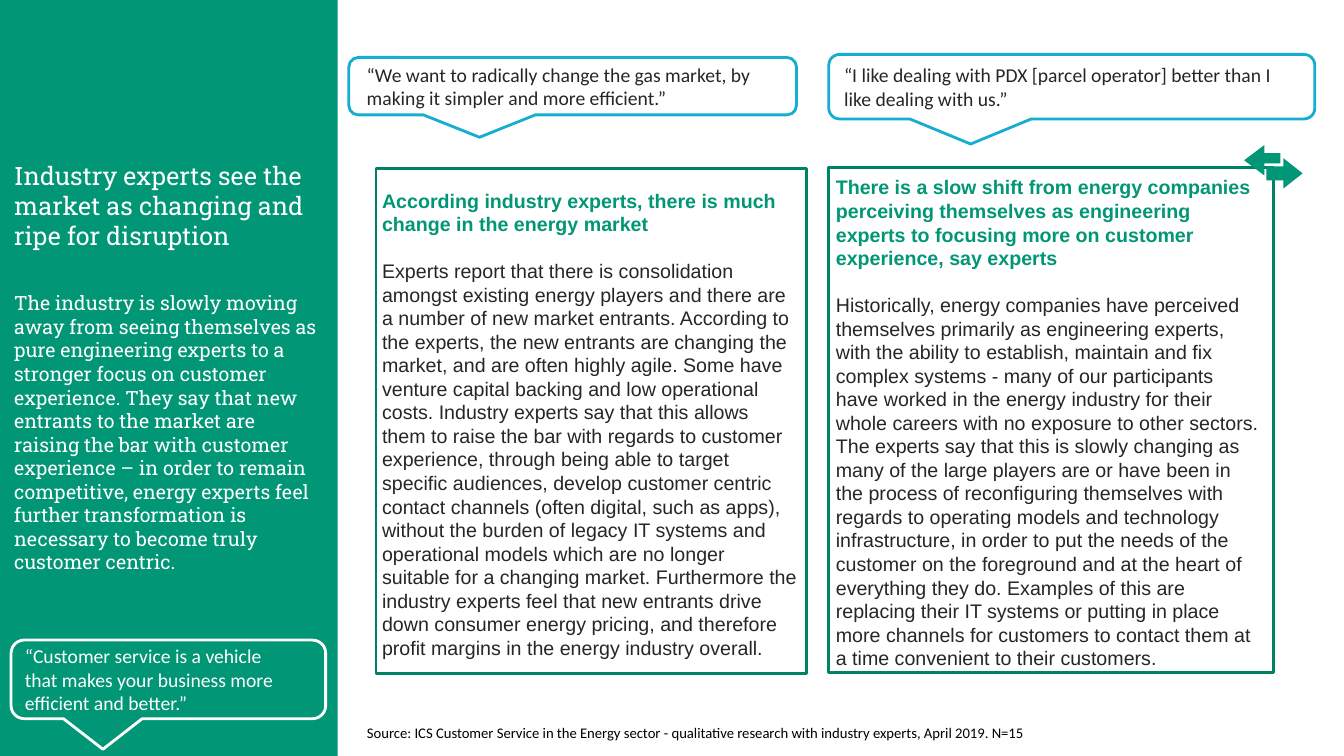
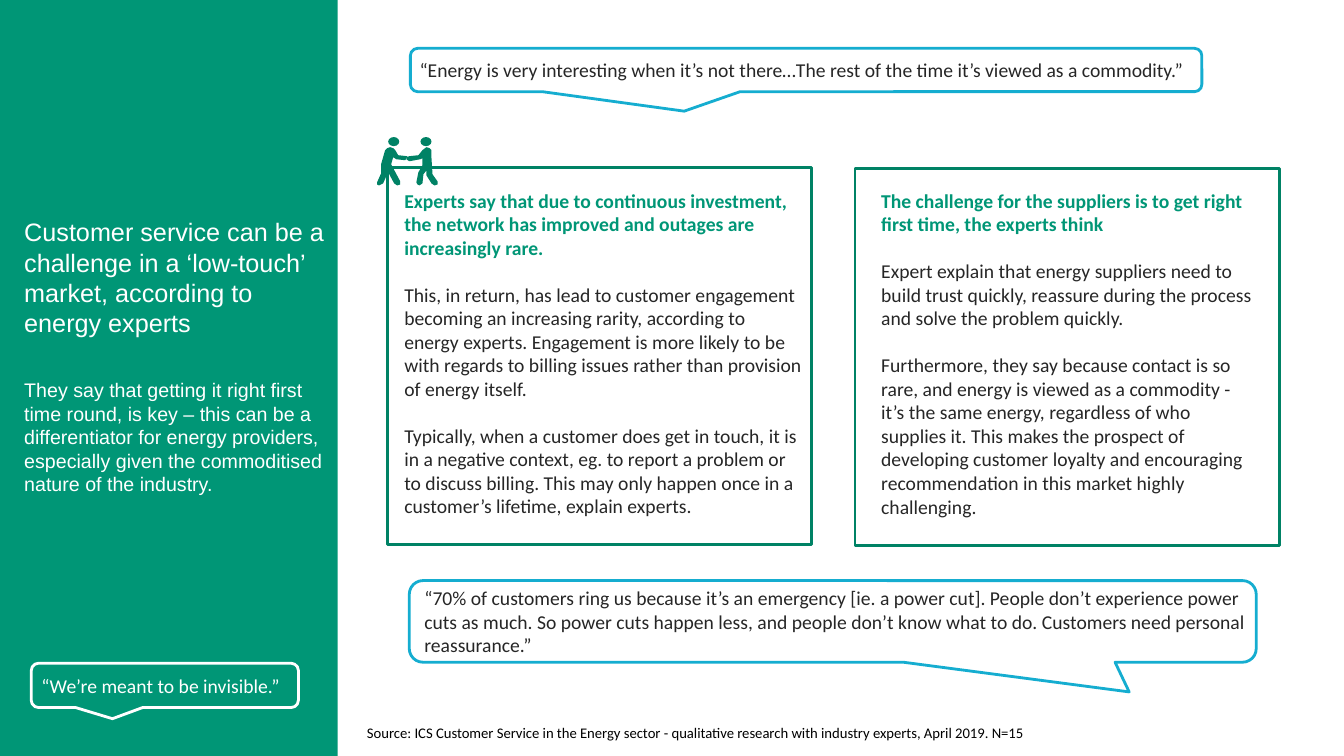
from dataclasses import dataclass

from pptx import Presentation
from pptx.dml.color import RGBColor
from pptx.enum.shapes import MSO_SHAPE
from pptx.enum.text import MSO_ANCHOR, MSO_AUTO_SIZE, PP_ALIGN
from pptx.util import Inches, Pt


@dataclass(frozen=True)
class Theme:
    """Colours, fonts and type sizes of the deck."""
    green: RGBColor = RGBColor(0x00, 0x96, 0x76)
    border: RGBColor = RGBColor(0x00, 0x82, 0x65)
    blue: RGBColor = RGBColor(0x15, 0xAD, 0xD0)
    white: RGBColor = RGBColor(0xFF, 0xFF, 0xFF)
    black: RGBColor = RGBColor(0x00, 0x00, 0x00)
    text: RGBColor = RGBColor(0x26, 0x26, 0x26)
    sans: str = "Arial"
    quote: str = "Calibri"
    slab: str = "Roboto Slab"
    title: float = 18
    body: float = 14
    source: float = 10.5
    leading: float = 1.2
    line: float = 2


SOURCE = ("Source: ICS Customer Service in the Energy sector - qualitative research "
          "with industry experts, April 2019. N=15")


class Deck:
    """Holds the presentation, its theme and the current slide."""

    def __init__(self, theme):
        """Start an empty widescreen presentation."""
        self.t = theme
        self.prs = Presentation()
        self.prs.slide_width, self.prs.slide_height = Inches(13.33), Inches(7.5)
        self.s = None

    def frame(self, tf, anchor=MSO_ANCHOR.TOP, margins=(0, 0, 0, 0)):
        """Set wrapping, anchor and left, top, right, bottom margins."""
        left, top, right, bottom = map(Inches, margins)
        values = dict(word_wrap=True, auto_size=MSO_AUTO_SIZE.NONE, vertical_anchor=anchor,
                      margin_left=left, margin_top=top, margin_right=right, margin_bottom=bottom)
        for name, value in values.items():
            setattr(tf, name, value)

    def paragraph(self, p, text, size, font, color, bold=False, before=0):
        """Fill one left-aligned paragraph."""
        spacing = dict(alignment=PP_ALIGN.LEFT, line_spacing=Pt(size * self.t.leading),
                       space_before=Pt(before), space_after=Pt(0))
        for name, value in spacing.items():
            setattr(p, name, value)
        r = p.add_run()
        r.text = text
        for name, value in dict(size=Pt(size), name=font, bold=bold).items():
            setattr(r.font, name, value)
        r.font.color.rgb = color

    def paint(self, sp, fill=None, line=None):
        """Give a shape a flat fill and outline, or none."""
        sp.shadow.inherit = False
        if fill is None:
            sp.fill.background()
        else:
            sp.fill.solid()
            sp.fill.fore_color.rgb = fill
        if line is None:
            sp.line.fill.background()
        else:
            sp.line.color.rgb = line
            sp.line.width = Pt(self.t.line)

    def shape(self, kind, box, fill=None, line=None):
        """Add a preset shape."""
        sp = self.s.shapes.add_shape(kind, *map(Inches, box))
        self.paint(sp, fill, line)
        return sp

    def text(self, box, text, size, font, color):
        """Add a plain text box."""
        sp = self.s.shapes.add_textbox(*map(Inches, box))
        self.frame(sp.text_frame)
        self.paragraph(sp.text_frame.paragraphs[0], text, size, font, color)

    def slide(self, left, top, lines, font, title, summary):
        """Add a slide with its side panel, title, summary and source."""
        t = self.t
        self.s = self.prs.slides.add_slide(self.prs.slide_layouts[5])
        panel = self.shape(MSO_SHAPE.RECTANGLE, (0, 0, 3.35, 7.5), t.green)
        self.s.shapes.element.insert(2, panel.element)
        sp = self.s.shapes.title
        width, height = 3.05, lines * 0.3
        box = dict(left=left, top=top, width=width, height=height)
        for name, value in box.items():
            setattr(sp, name, Inches(value))
        self.frame(sp.text_frame)
        self.paragraph(sp.text_frame.paragraphs[0], title, t.title, font, t.white)
        self.text((left, top + height + 0.4, width, 2.9), summary, t.body, font, t.white)
        self.text((3.64, 7.18, 6.84, 0.19), SOURCE, t.source, t.quote, t.black)

    def quote(self, box, text, tail, margins=(0.12, 0.1), on_panel=False):
        """Add a speech callout with its quotation."""
        t = self.t
        line, color = (t.white, t.white) if on_panel else (t.blue, t.text)
        sp = self.shape(MSO_SHAPE.ROUNDED_RECTANGULAR_CALLOUT, box, line=line)
        for i, value in enumerate((*tail, 0.167)):
            sp.adjustments[i] = value
        left, right = margins
        self.frame(sp.text_frame, MSO_ANCHOR.MIDDLE, (left, 0, right, 0))
        self.paragraph(sp.text_frame.paragraphs[0], text, t.body, t.quote, color)

    def card(self, box, margins, font, heading, *paragraphs):
        """Add a bordered card with a bold heading and paragraphs."""
        t = self.t
        sp = self.shape(MSO_SHAPE.RECTANGLE, box, t.white, t.border)
        tf = sp.text_frame
        self.frame(tf, margins=(*margins, 0))
        self.paragraph(tf.paragraphs[0], heading, t.body, font, t.green, bold=True)
        for text in paragraphs:
            self.paragraph(tf.add_paragraph(), text, t.body, font, t.text,
                           before=t.body * t.leading)

    def outline(self, points, fill):
        """Add a closed freeform from points in hundredths of an inch."""
        fb = self.s.shapes.build_freeform(*points[0], scale=Inches(0.01))
        fb.add_line_segments(points[1:], close=True)
        self.paint(fb.convert_to_shape(), fill)


LEFT_ARROW = [(1270, 162), (1270, 152), (1254, 152), (1254, 144), (1234, 159),
              (1254, 174), (1254, 162)]
RIGHT_ARROW = [(1256, 165), (1273, 165), (1273, 157), (1292, 172), (1273, 187),
               (1273, 179), (1256, 179)]
LEFT_PERSON = [(404, 155), (395, 154), (392, 149), (390, 147), (387, 146), (384, 147),
               (382, 149), (378, 163), (378, 172), (374, 181), (374, 183), (376, 184),
               (380, 182), (384, 173), (384, 169), (391, 182), (394, 184), (397, 183),
               (397, 180), (388, 163), (390, 156), (393, 158), (402, 159)]
RIGHT_PERSON = [(434, 180), (429, 173), (428, 157), (428, 149), (426, 147), (423, 146),
                (419, 149), (415, 154), (406, 155), (403, 156), (403, 158), (406, 160),
                (417, 158), (419, 157), (419, 164), (415, 171), (413, 181), (414, 183),
                (416, 184), (419, 182), (420, 173), (423, 169), (423, 174), (428, 182),
                (431, 184), (434, 183)]
TAIL = (-0.208, 0.889)


def disruption(d):
    """Build the slide on a changing market."""
    t = d.t
    d.slide(0.14, 1.59, 3, t.slab,
            "Industry experts see the market as changing and ripe for disruption",
            "The industry is slowly moving away from seeing themselves as pure engineering "
            "experts to a stronger focus on customer experience. They say that new entrants to "
            "the market are raising the bar with customer experience – in order to remain "
            "competitive, energy experts feel further transformation is necessary to become "
            "truly customer centric.")
    d.quote((0.11, 6.35, 3.12, 0.78),
            "“Customer service is a vehicle that makes your business more efficient and better.”",
            TAIL, (0.1, 0.36), on_panel=True)
    d.quote((3.46, 0.57, 4.44, 0.57),
            "“We want to radically change the gas market, by making it simpler and more "
            "efficient.”", TAIL, (0.15, 0.2))
    d.quote((8.22, 0.54, 4.82, 0.64),
            "“I like dealing with PDX [parcel operator] better than I like dealing with us.”",
            TAIL, (0.12, 0.15))
    d.card((3.73, 1.67, 4.27, 5.01), (0.06, 0.2, 0.09), t.sans,
           "According industry experts, there is much change in the energy market",
           "Experts report that there is consolidation amongst existing energy players and there "
           "are a number of new market entrants. According to the experts, the new entrants are "
           "changing the market, and are often highly agile. Some have venture capital backing "
           "and low operational costs. Industry experts say that this allows them to raise the "
           "bar with regards to customer experience, through being able to target specific "
           "audiences, develop customer centric contact channels (often digital, such as apps), "
           "without the burden of legacy IT systems and operational models which are no longer "
           "suitable for a changing market. Furthermore the industry experts feel that new "
           "entrants drive down consumer energy pricing, and therefore profit margins in the "
           "energy industry overall.")
    d.card((8.22, 1.66, 4.41, 5.01), (0.07, 0.08, 0.13), t.sans,
           "There is a slow shift from energy companies perceiving themselves as engineering "
           "experts to focusing more on customer experience, say experts",
           "Historically, energy companies have perceived themselves primarily as engineering "
           "experts, with the ability to establish, maintain and fix complex systems - many of "
           "our participants have worked in the energy industry for their whole careers with no "
           "exposure to other sectors. The experts say that this is slowly changing as many of "
           "the large players are or have been in the process of reconfiguring themselves with "
           "regards to operating models and technology infrastructure, in order to put the needs "
           "of the customer on the foreground and at the heart of everything they do. Examples "
           "of this are replacing their IT systems or putting in place more channels for "
           "customers to contact them at a time convenient to their customers.")
    for arrow in (LEFT_ARROW, RIGHT_ARROW):
        d.outline(arrow, t.green)


def low_touch(d):
    """Build the slide on a low-touch market."""
    t = d.t
    d.slide(0.24, 2.15, 4, t.sans,
            "Customer service can be a challenge in a ‘low-touch’ market, according to energy "
            "experts",
            "They say that getting it right first time round, is key – this can be a "
            "differentiator for energy providers, especially given the commoditised nature of "
            "the industry.")
    d.quote((4.07, 0.48, 7.85, 0.43),
            "“Energy is very interesting when it’s not there…The rest of the time it’s viewed as "
            "a commodity.”", (-0.154, 0.95), (0.07, 0.05))
    d.quote((0.31, 6.58, 2.65, 0.44), "“We’re meant to be invisible.”",
            (-0.196, 0.751), (0.08, 0.05), on_panel=True)
    d.quote((4.06, 5.76, 8.4, 0.81),
            "“70% of customers ring us because it’s an emergency [ie. a power cut]. People don’t "
            "experience power cuts as much. So power cuts happen less, and people don’t know "
            "what to do. Customers need personal reassurance.”", (0.35, 0.864), (0.11, 0.02))
    d.card((3.84, 1.66, 4.21, 3.74), (0.17, 0.21, 0.08), t.quote,
           "Experts say that due to continuous investment, the network has improved and outages "
           "are increasingly rare.",
           "This, in return, has lead to customer engagement becoming an increasing rarity, "
           "according to energy experts. Engagement is more likely to be with regards to billing "
           "issues rather than provision of energy itself.",
           "Typically, when a customer does get in touch, it is in a negative context, eg. to "
           "report a problem or to discuss billing. This may only happen once in a customer’s "
           "lifetime, explain experts.")
    d.card((8.48, 1.67, 4.21, 3.74), (0.26, 0.2, 0.21), t.quote,
           "The challenge for the suppliers is to get right first time, the experts think",
           "Expert explain that energy suppliers need to build trust quickly, reassure during "
           "the process and solve the problem quickly.",
           "Furthermore, they say because contact is so rare, and energy is viewed as a "
           "commodity - it’s the same energy, regardless of who supplies it. This makes the "
           "prospect of developing customer loyalty and encouraging recommendation in this "
           "market highly challenging.")
    for body, head_left in ((LEFT_PERSON, 3.85), (RIGHT_PERSON, 4.17)):
        d.outline(body, t.border)
        d.shape(MSO_SHAPE.OVAL, (head_left, 1.36, 0.11, 0.09), t.border)


def main():
    """Build and save the deck."""
    d = Deck(Theme())
    disruption(d)
    low_touch(d)
    d.prs.save("out.pptx")


if __name__ == "__main__":
    main()
